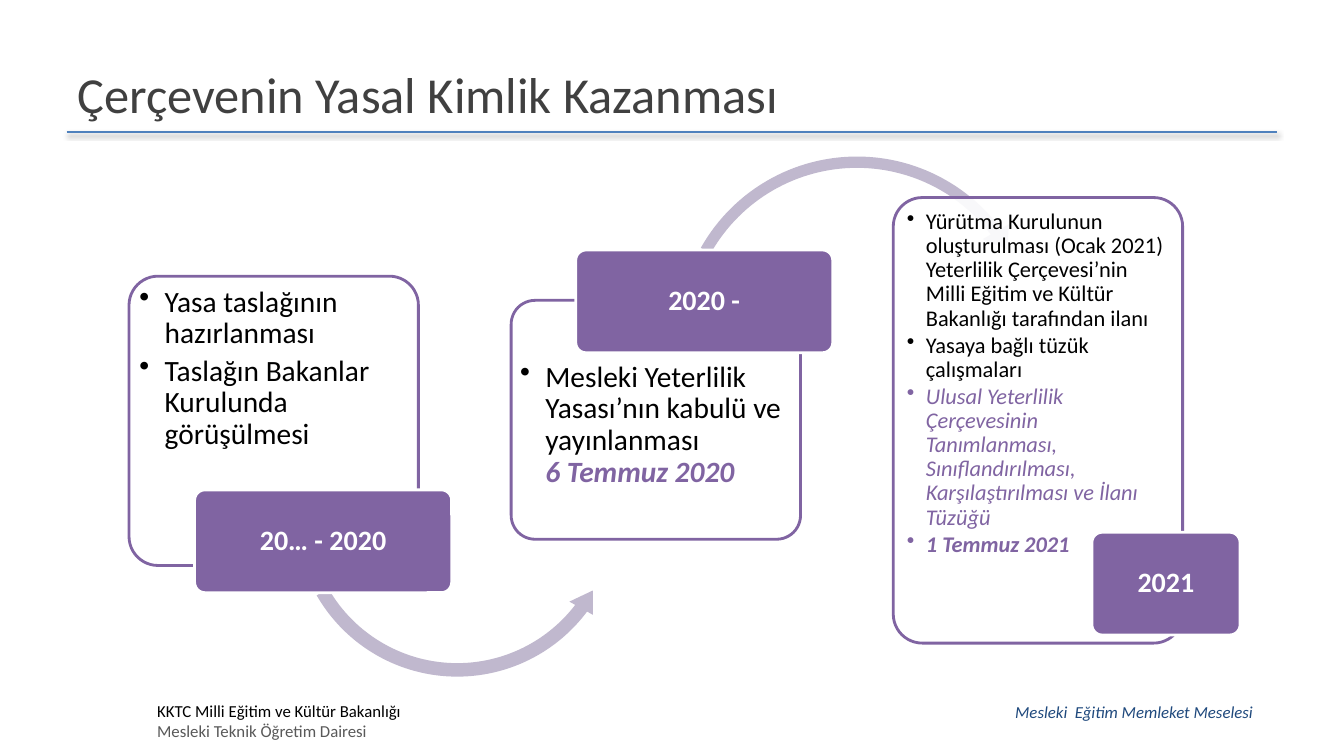
from dataclasses import dataclass

from pptx import Presentation
from pptx.dml.color import RGBColor
from pptx.enum.shapes import MSO_CONNECTOR, MSO_SHAPE
from pptx.enum.text import MSO_ANCHOR, PP_ALIGN
from pptx.oxml import parse_xml
from pptx.oxml.ns import nsdecls, qn
from pptx.oxml.xmlchemy import OxmlElement
from pptx.shapes.autoshape import Shape
from pptx.slide import Slide
from pptx.text.text import TextFrame, _Paragraph
from pptx.util import Emu, Pt

EMU_PER_PX = 9144
FONT = "Calibri"
BLACK = RGBColor(0x00, 0x00, 0x00)
WHITE = RGBColor(0xFF, 0xFF, 0xFF)
PURPLE = RGBColor(0x80, 0x64, 0xA2)
LILAC = RGBColor(0xC0, 0xB8, 0xCE)
BLUE = RGBColor(0x4F, 0x81, 0xBD)
NAVY = RGBColor(0x1F, 0x49, 0x7D)
GREY = RGBColor(0x59, 0x59, 0x59)
TITLE_GREY = RGBColor(0x40, 0x40, 0x40)


@dataclass(frozen=True)
class Box:
    left: int
    top: int
    width: int
    height: int

    def emu(self) -> list[Emu]:
        return [px(n) for n in (self.left, self.top, self.width, self.height)]


@dataclass(frozen=True)
class Phrase:
    text: str
    color: RGBColor = BLACK
    bold: bool = False
    italic: bool = False
    new_line: bool = False


@dataclass(frozen=True)
class Arrow:
    box: Box
    kind: MSO_SHAPE
    adjustments: tuple[float, ...]


@dataclass(frozen=True)
class Stage:
    card: Box
    insets: tuple[int, int, int, int]
    size: int
    indent: int
    gap: int
    bullets: tuple[tuple[Phrase, ...], ...]
    label: Box
    date: str
    arrow: Arrow | None = None


STAGES = (
    Stage(
        Box(128, 274, 287, 287), (2, 2, 3, 4), 21, 25, 4,
        ((Phrase("Yasa taslağının hazırlanması"),),
         (Phrase("Taslağın Bakanlar Kurulunda görüşülmesi"),)),
        Box(193, 486, 255, 102), "20… - 2020",
        Arrow(Box(286, 343, 335, 335), MSO_SHAPE.LEFT_CIRCULAR_ARROW,
              (0.04, 4.69, 22.25, 90.05, 0.04)),
    ),
    Stage(
        Box(507, 298, 287, 237), (2, 54, 3, 4), 21, 25, 4,
        ((Phrase("Mesleki Yeterlilik Yasası’nın kabulü ve yayınlanması"),
          Phrase("6 Temmuz 2020", PURPLE, bold=True, italic=True, new_line=True)),),
        Box(571, 248, 255, 102), "2020 -",
        Arrow(Box(663, 146, 374, 374), MSO_SHAPE.CIRCULAR_ARROW,
              (0.03, 4.17, 193.91, 125.59, 0.04)),
    ),
    Stage(
        Box(886, 196, 287, 442), (5, 4, 3, 4), 16, 19, 2,
        ((Phrase("Yürütma Kurulunun oluşturulması (Ocak 2021) Yeterlilik "
                 "Çerçevesi’nin Milli Eğitim ve Kültür Bakanlığı "
                 "tarafından ilanı"),),
         (Phrase("Yasaya bağlı tüzük çalışmaları"),),
         (Phrase("Ulusal Yeterlilik Çerçevesinin Tanımlanması, "
                 "Sınıflandırılması, Karşılaştırılması ve İlanı Tüzüğü",
                 PURPLE, italic=True),),
         (Phrase("1 Temmuz 2021", PURPLE, bold=True, italic=True),)),
        Box(1083, 528, 147, 102), "2021",
    ),
)


def px(value: int) -> Emu:
    return Emu(value * EMU_PER_PX)


def write(paragraph: _Paragraph, text: str, *, size: int, color: RGBColor,
          bold: bool = False, italic: bool = False) -> None:
    run = paragraph.add_run()
    run.text = text
    run.font.name = FONT
    run.font.size = Pt(size)
    run.font.color.rgb = color
    run.font.bold = bold
    run.font.italic = italic


def next_paragraph(frame: TextFrame, index: int) -> _Paragraph:
    return frame.add_paragraph() if index else frame.paragraphs[0]


def set_insets(frame: TextFrame, insets: tuple[int, int, int, int]) -> None:
    frame.word_wrap = True
    (frame.margin_left, frame.margin_top,
     frame.margin_right, frame.margin_bottom) = map(px, insets)


def add_filled(slide: Slide, kind: MSO_SHAPE, box: Box, fill: RGBColor,
               line: RGBColor | None, adjustments: tuple[float, ...]) -> Shape:
    shape = slide.shapes.add_shape(kind, *box.emu())
    shape.shadow.inherit = False
    for index, value in enumerate(adjustments):
        shape.adjustments[index] = value
    shape.fill.solid()
    shape.fill.fore_color.rgb = fill
    if line is None:
        shape.line.fill.background()
    else:
        shape.line.color.rgb = line
        shape.line.width = Pt(2)
    return shape


def set_bullet(paragraph: _Paragraph, indent: int) -> None:
    properties = paragraph._p.get_or_add_pPr()
    properties.set("marL", str(px(indent)))
    properties.set("indent", str(-px(indent)))
    bullet = OxmlElement("a:buChar")
    bullet.set("char", "•")
    properties.append(bullet)


def add_card(slide: Slide, stage: Stage) -> None:
    card = add_filled(slide, MSO_SHAPE.ROUNDED_RECTANGLE, stage.card,
                      WHITE, PURPLE, (0.1,))
    alpha = OxmlElement("a:alpha")
    alpha.set("val", "90000")
    card._element.spPr.find(qn("a:solidFill")).find(qn("a:srgbClr")).append(alpha)
    frame = card.text_frame
    set_insets(frame, stage.insets)
    frame.vertical_anchor = MSO_ANCHOR.TOP
    for index, phrases in enumerate(stage.bullets):
        paragraph = next_paragraph(frame, index)
        set_bullet(paragraph, stage.indent)
        paragraph.alignment = PP_ALIGN.LEFT
        paragraph.line_spacing = 0.9
        paragraph.space_after = Pt(stage.gap)
        for phrase in phrases:
            if phrase.new_line:
                paragraph.add_line_break()
            write(paragraph, phrase.text, size=stage.size, color=phrase.color,
                  bold=phrase.bold, italic=phrase.italic)


def add_label(slide: Slide, stage: Stage) -> None:
    label = add_filled(slide, MSO_SHAPE.ROUNDED_RECTANGLE, stage.label,
                       PURPLE, WHITE, (0.1,))
    frame = label.text_frame
    set_insets(frame, (4, 3, 4, 3))
    frame.vertical_anchor = MSO_ANCHOR.MIDDLE
    paragraph = frame.paragraphs[0]
    paragraph.alignment = PP_ALIGN.CENTER
    paragraph.line_spacing = 0.9
    write(paragraph, stage.date, size=20, color=WHITE, bold=True)


def add_footer(slide: Slide, box: Box, lines: tuple[Phrase, ...]) -> None:
    frame = slide.shapes.add_textbox(*box.emu()).text_frame
    frame.word_wrap = True
    for index, line in enumerate(lines):
        write(next_paragraph(frame, index), line.text, size=12,
              color=line.color, italic=line.italic)


def add_title(slide: Slide, text: str) -> None:
    title = slide.shapes.title
    title.left, title.top, title.width, title.height = Box(67, 30, 1200, 125).emu()
    title.text_frame.vertical_anchor = MSO_ANCHOR.MIDDLE
    paragraph = title.text_frame.paragraphs[0]
    paragraph.alignment = PP_ALIGN.LEFT
    write(paragraph, text, size=36, color=TITLE_GREY)


def add_title_rule(slide: Slide) -> None:
    rule = slide.shapes.add_connector(
        MSO_CONNECTOR.STRAIGHT, px(66), px(131), px(1267), px(131))
    rule.line.color.rgb = BLUE
    rule.line.width = Pt(2)
    rule._element.spPr.append(parse_xml(
        f'<a:effectLst {nsdecls("a")}><a:outerShdw blurRad="{Pt(3)}" '
        f'dist="{Pt(2)}" dir="5400000" rotWithShape="0"><a:srgbClr val="000000">'
        '<a:alpha val="38000"/></a:srgbClr></a:outerShdw></a:effectLst>'))


def main() -> None:
    presentation = Presentation()
    presentation.slide_width, presentation.slide_height = px(1333), px(750)
    slide = presentation.slides.add_slide(presentation.slide_layouts[5])
    add_title_rule(slide)
    add_footer(slide, Box(997, 691, 275, 30),
               (Phrase("Mesleki  Eğitim Memleket Meselesi", NAVY, italic=True),))
    add_footer(slide, Box(146, 690, 379, 50),
               (Phrase("KKTC Milli Eğitim ve Kültür Bakanlığı"),
                Phrase("Mesleki Teknik Öğretim Dairesi", GREY)))
    add_title(slide, "Çerçevenin Yasal Kimlik Kazanması")
    for stage in STAGES:
        add_card(slide, stage)
        if stage.arrow:
            add_filled(slide, stage.arrow.kind, stage.arrow.box, LILAC, None,
                       stage.arrow.adjustments)
        add_label(slide, stage)
    presentation.save("out.pptx")


if __name__ == "__main__":
    main()
